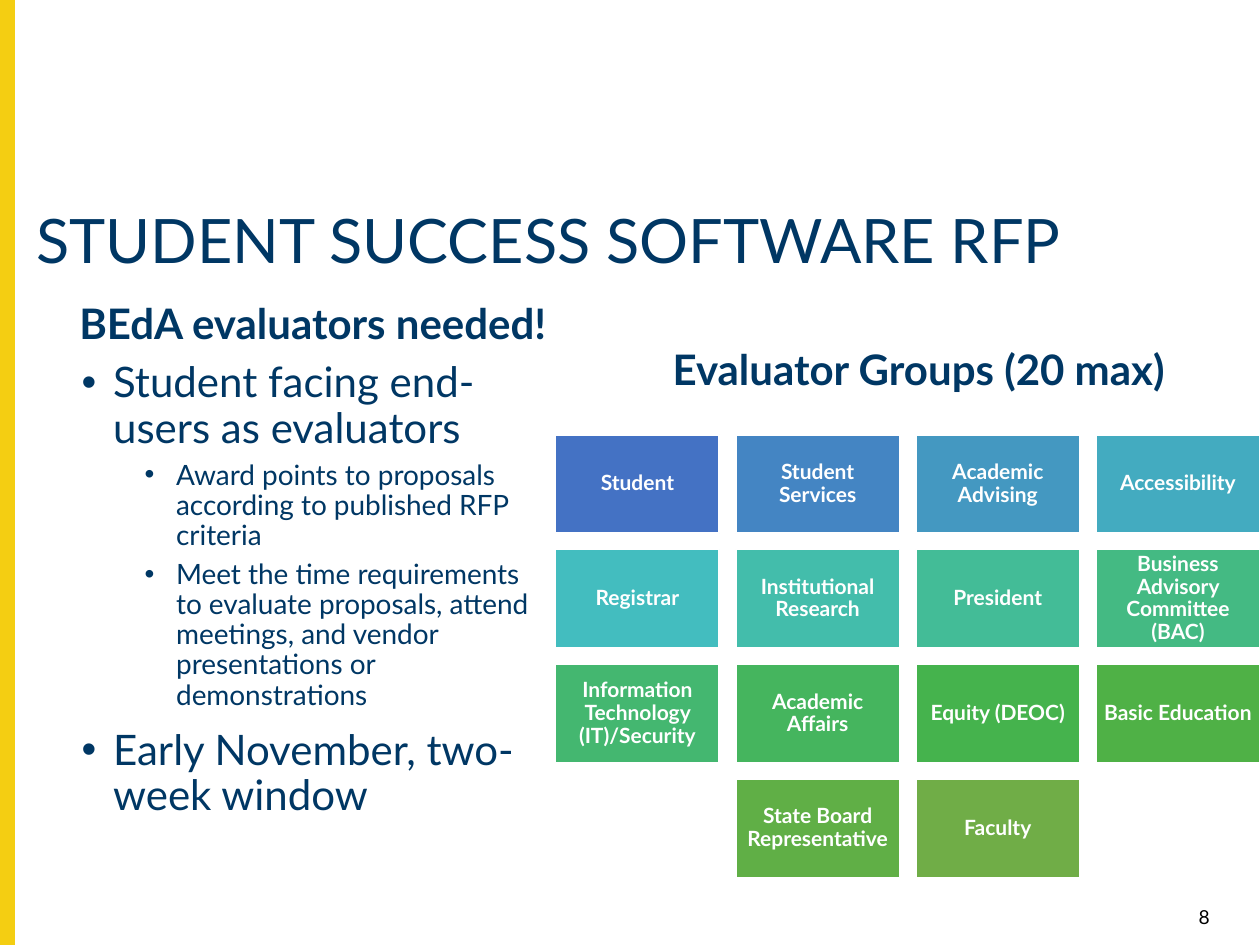
"""Build the Student Success Software RFP slide with its grid of evaluator groups."""

from dataclasses import dataclass

from lxml.etree import SubElement
from pptx import Presentation
from pptx.dml.color import RGBColor
from pptx.enum.shapes import MSO_SHAPE
from pptx.enum.text import MSO_ANCHOR, PP_ALIGN
from pptx.oxml.ns import qn
from pptx.util import Pt

FONT = "Lato"
NAVY = RGBColor(0x00, 0x37, 0x64)
YELLOW = RGBColor(0xF4, 0xCE, 0x12)
WHITE = RGBColor(0xFF, 0xFF, 0xFF)
BLACK = RGBColor(0x00, 0x00, 0x00)

COLUMNS = 4
GRID_LEFT, GRID_TOP = 317.5, 248.5
TILE_WIDTH, TILE_HEIGHT = 93.6, 56.2
TILE_GAP = 9.36
TILE_INSET = 3.6
BULLET_HANG = 18


@dataclass(frozen=True)
class Box:
    left: float
    top: float
    width: float
    height: float

    def lengths(self) -> list:
        return [Pt(value) for value in (self.left, self.top, self.width, self.height)]


@dataclass(frozen=True)
class Label:
    text: str
    box: Box
    size: float
    color: RGBColor = NAVY
    bold: bool = False
    align: PP_ALIGN = PP_ALIGN.LEFT
    anchor: MSO_ANCHOR = MSO_ANCHOR.TOP
    spacing: float = 0.9


@dataclass(frozen=True)
class Bullet:
    text: str
    size: float
    indent: float
    space_before: float
    level: int = 0


@dataclass(frozen=True)
class Group:
    name: str
    fill: RGBColor


LABELS = [
    Label("STUDENT SUCCESS SOFTWARE RFP", Box(13.7, 116.6, 682.5, 58.3), 35),
    Label("BEdA evaluators needed!", Box(38.2, 162, 315.4, 41), 24,
          bold=True, anchor=MSO_ANCHOR.BOTTOM),
    Label("Evaluator Groups (20 max)", Box(377.3, 188, 319, 41), 24,
          bold=True, anchor=MSO_ANCHOR.BOTTOM),
    Label("8", Box(662.4, 514, 36, 15.1), 11, BLACK, align=PP_ALIGN.RIGHT, spacing=1.0),
]

BULLETS_BOX = Box(39.6, 203, 277.9, 224.6)
BULLETS = [
    Bullet("Student facing end-users as evaluators", 24, 18, 0),
    Bullet("Award points to proposals according to published RFP criteria", 16, 54, 5, 1),
    Bullet("Meet the time requirements to evaluate proposals, attend meetings, "
           "and vendor presentations or demonstrations", 16, 54, 5, 1),
    Bullet("Early November, two-week window", 24, 18, 10),
]

GROUPS = [
    Group("Student", RGBColor(0x44, 0x72, 0xC4)),
    Group("Student Services", RGBColor(0x44, 0x85, 0xC3)),
    Group("Academic Advising", RGBColor(0x44, 0x98, 0xC1)),
    Group("Accessibility", RGBColor(0x43, 0xAB, 0xC0)),
    Group("Registrar", RGBColor(0x43, 0xBD, 0xBF)),
    Group("Institutional Research", RGBColor(0x43, 0xBD, 0xAB)),
    Group("President", RGBColor(0x43, 0xBC, 0x97)),
    Group("Business Advisory Committee (BAC)", RGBColor(0x44, 0xBA, 0x83)),
    Group("Information Technology (IT)/Security", RGBColor(0x44, 0xB7, 0x70)),
    Group("Academic Affairs", RGBColor(0x45, 0xB5, 0x5E)),
    Group("Equity (DEOC)", RGBColor(0x45, 0xB3, 0x4D)),
    Group("Basic Education", RGBColor(0x4F, 0xB1, 0x46)),
    Group("State Board Representative", RGBColor(0x60, 0xAF, 0x46)),
    Group("Faculty", RGBColor(0x70, 0xAD, 0x47)),
]


def style_paragraph(paragraph, size: float, color: RGBColor, bold: bool = False,
                    align: PP_ALIGN = PP_ALIGN.LEFT, spacing: float = 0.9) -> None:
    paragraph.alignment = align
    paragraph.line_spacing = spacing
    for run in paragraph.runs:
        run.font.name = FONT
        run.font.size = Pt(size)
        run.font.bold = bold
        run.font.color.rgb = color


def add_rectangle(slide, box: Box, fill: RGBColor, line: RGBColor):
    shape = slide.shapes.add_shape(MSO_SHAPE.RECTANGLE, *box.lengths())
    shape.shadow.inherit = False
    shape.fill.solid()
    shape.fill.fore_color.rgb = fill
    shape.line.color.rgb = line
    shape.line.width = Pt(1)
    return shape


def add_label(slide, label: Label) -> None:
    text_frame = slide.shapes.add_textbox(*label.box.lengths()).text_frame
    text_frame.word_wrap = True
    text_frame.vertical_anchor = label.anchor
    text_frame.text = label.text
    style_paragraph(text_frame.paragraphs[0], label.size, label.color,
                    label.bold, label.align, label.spacing)


def add_bullets(slide, box: Box, bullets: list[Bullet]) -> None:
    text_frame = slide.shapes.add_textbox(*box.lengths()).text_frame
    text_frame.word_wrap = True
    text_frame.text = "\n".join(bullet.text for bullet in bullets)
    for paragraph, bullet in zip(text_frame.paragraphs, bullets):
        paragraph.level = bullet.level
        style_paragraph(paragraph, bullet.size, NAVY)
        paragraph.space_before = Pt(bullet.space_before)
        properties = paragraph._p.get_or_add_pPr()
        properties.set("marL", str(Pt(bullet.indent)))
        properties.set("indent", str(-Pt(BULLET_HANG)))
        SubElement(properties, qn("a:buFont"), typeface="Arial")
        SubElement(properties, qn("a:buChar"), char="•")


def add_tile(slide, group: Group, box: Box) -> None:
    text_frame = add_rectangle(slide, box, group.fill, WHITE).text_frame
    text_frame.word_wrap = True
    text_frame.vertical_anchor = MSO_ANCHOR.MIDDLE
    text_frame.margin_left = text_frame.margin_right = Pt(TILE_INSET)
    text_frame.margin_top = text_frame.margin_bottom = Pt(TILE_INSET)
    text_frame.text = group.name
    style_paragraph(text_frame.paragraphs[0], 12, WHITE, True, PP_ALIGN.CENTER)


def add_group_grid(slide, groups: list[Group]) -> None:
    pitch_x, pitch_y = TILE_WIDTH + TILE_GAP, TILE_HEIGHT + TILE_GAP
    for row, start in enumerate(range(0, len(groups), COLUMNS)):
        members = groups[start:start + COLUMNS]
        row_left = GRID_LEFT + (COLUMNS - len(members)) * pitch_x / 2
        for column, group in enumerate(members):
            add_tile(slide, group, Box(row_left + column * pitch_x, GRID_TOP + row * pitch_y,
                                       TILE_WIDTH, TILE_HEIGHT))


def main() -> None:
    presentation = Presentation()
    presentation.slide_width, presentation.slide_height = Pt(720), Pt(540)
    slide = presentation.slides.add_slide(presentation.slide_layouts[6])
    add_rectangle(slide, Box(0, 0, 8, 540), YELLOW, YELLOW)
    for label in LABELS:
        add_label(slide, label)
    add_bullets(slide, BULLETS_BOX, BULLETS)
    add_group_grid(slide, GROUPS)
    presentation.save("out.pptx")


if __name__ == "__main__":
    main()
